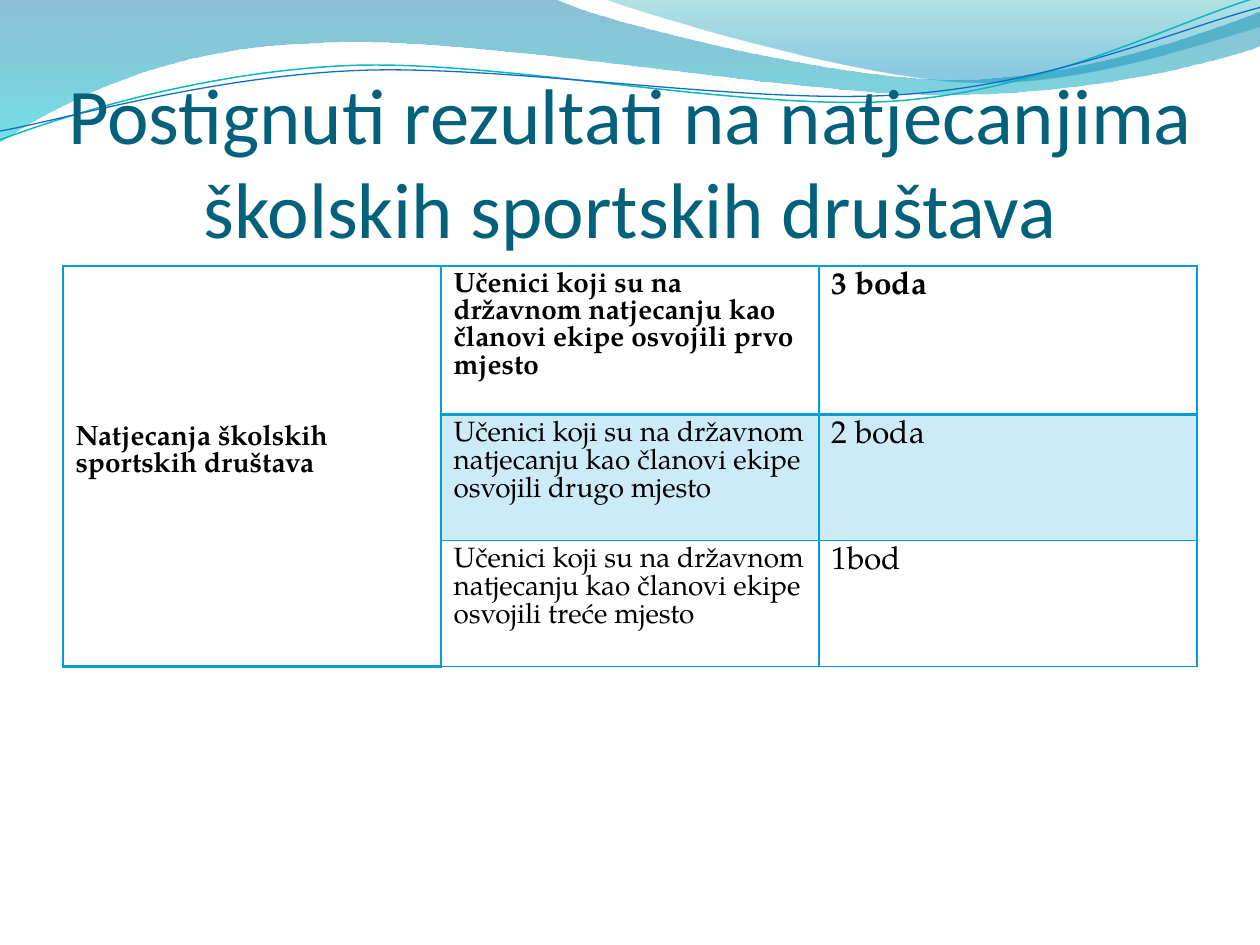
from dataclasses import dataclass
from math import cos, radians, sin

from lxml.etree import SubElement
from pptx import Presentation
from pptx.dml.color import RGBColor
from pptx.enum.text import MSO_ANCHOR, PP_ALIGN
from pptx.oxml.ns import qn
from pptx.util import Inches, Pt


@dataclass(frozen=True)
class Theme:
    title_font: str = "Calibri"
    body_font: str = "TeX Gyre Pagella"
    title_size: float = 45
    body_size: float = 16
    points_size: float = 18
    title: str = "04617B"
    text: str = "000000"
    border: str = "009DD9"
    band: str = "CCEBF7"


THEME = Theme()

TITLE = "Postignuti rezultati na natjecanjima školskih sportskih društava"
CATEGORY = "Natjecanja školskih sportskih društava"
RESULT = "Učenici koji su na državnom natjecanju kao članovi ekipe osvojili {} mjesto"
PLACES = [("prvo", "3 boda"), ("drugo", "2 boda"), ("treće", "1bod")]
ROW_HEIGHTS = [1.18, 1, 1]
STRAND_TILT = -2.7

WAVES = [
    ([[(0, 0)],
      [(4.4, -0.01)],
      [(4.76, 0.17), (6.64, 0.63), (7.58, 0.63)],
      [(8.53, 0.63), (9.58, 0.26), (10, 0.09)],
      [(10.01, 0.36)],
      [(9.83, 0.44), (8.7, 0.76), (7.46, 0.75)],
      [(6.22, 0.75), (3.82, 0.28), (2.57, 0.34)],
      [(1.29, 0.36), (0.46, 0.83), (-0.01, 1.13)],
      [(0, 0)]],
     [(0, "0074A1", 45), (1, "00C6CF", 55)]),
    ([[(4.79, -0.01)],
      [(5.09, 0.11), (6.82, 0.62), (7.69, 0.65)],
      [(8.56, 0.69), (9.61, 0.32), (10, 0.21)],
      [(10, 0)],
      [(4.79, -0.01)]],
     [(0, "00A1A9", 30), (0.8, "008BBF", 45)]),
]
STRANDS = [
    ([[(0, 1.11)],
      [(0.48, 0.93), (1.58, 0.57), (2.77, 0.52)],
      [(3.95, 0.47), (5.93, 0.89), (7.13, 0.8)],
      [(8.33, 0.71), (9.38, 0.15), (9.98, -0.02)]],
     (4.99, 0.58), "0AB8BF", 0.85),
    ([[(0, 1.04)],
      [(0.47, 0.96), (1.64, 0.61), (2.83, 0.56)],
      [(4.03, 0.51), (5.97, 0.84), (7.17, 0.75)],
      [(8.36, 0.67), (9.41, 0.21), (10, 0.06)]],
     (5, 0.59), "0F6FC6", 0.75),
]


def rgb(value):
    return RGBColor.from_string(value)


def set_attrs(obj, values):
    for name, value in values.items():
        setattr(obj, name, value)


def rotate(point, center, degrees):
    angle = radians(degrees)
    dx, dy = point[0] - center[0], point[1] - center[1]
    return (center[0] + dx * cos(angle) - dy * sin(angle),
            center[1] + dx * sin(angle) + dy * cos(angle))


def add_curve(slide, segments, close):
    points = [(Inches(x), Inches(y)) for segment in segments for x, y in segment]
    builder = slide.shapes.build_freeform(*points[0])
    builder.add_line_segments(points[1:], close=close)
    sp = builder.convert_to_shape()
    sp.shadow.inherit = False
    lines = iter(list(sp.element.spPr.iter(qn("a:lnTo"))))
    for segment in segments[1:]:
        first, *rest = [next(lines) for _ in segment]
        if rest:
            first.tag = qn("a:cubicBezTo")
            for line in rest:
                first.append(line[0])
                line.getparent().remove(line)
    return sp


def add_wave(slide, segments, stops):
    sp = add_curve(slide, segments, True)
    sp.line.fill.background()
    sp.fill.gradient()
    sp.fill.gradient_angle = 270
    for stop, (position, color, _) in zip(sp.fill.gradient_stops, stops):
        stop.position = position
        stop.color.rgb = rgb(color)
    colors = sp.element.spPr.iter(qn("a:srgbClr"))
    for color, (_, _, alpha) in zip(colors, stops):
        SubElement(color, qn("a:alpha"), val=str(alpha * 1000))


def add_strand(slide, segments, center, color, width):
    level = [[rotate(point, center, -STRAND_TILT) for point in segment]
             for segment in segments]
    sp = add_curve(slide, level, False)
    sp.rotation = STRAND_TILT
    sp.fill.background()
    sp.line.color.rgb = rgb(color)
    sp.line.width = Pt(width)


def write(tf, text, font, size, color, bold=False, align=PP_ALIGN.LEFT):
    p = tf.paragraphs[0]
    p.alignment = align
    r = p.add_run()
    r.text = text
    set_attrs(r.font, {"name": font, "size": Pt(size), "bold": bold})
    r.font.color.rgb = rgb(color)


def add_title(slide):
    box = slide.shapes.add_textbox(Inches(0.5), Inches(0.77), Inches(9), Inches(1.25))
    tf = box.text_frame
    set_attrs(tf, {"word_wrap": True, "vertical_anchor": MSO_ANCHOR.BOTTOM,
                   "margin_left": 0, "margin_right": 0,
                   "margin_top": Inches(0.05), "margin_bottom": 0})
    write(tf, TITLE, THEME.title_font, THEME.title_size, THEME.title,
          align=PP_ALIGN.CENTER)


def set_borders(cell, widths):
    tcPr = cell._tc.get_or_add_tcPr()
    for side, width in widths.items():
        ln = SubElement(tcPr, qn(f"a:ln{side}"), w=str(Pt(width)))
        fill = SubElement(ln, qn("a:solidFill"))
        SubElement(fill, qn("a:srgbClr"), val=THEME.border)


def style_cell(cell, row, col):
    heavy_bottom = row == 0 or (row == 2 and col == 0)
    set_borders(cell, {"L": 1, "R": 1, "T": 2 if row == 1 and col else 1,
                       "B": 2 if heavy_bottom else 1})
    if row == 1 and col:
        cell.fill.solid()
        cell.fill.fore_color.rgb = rgb(THEME.band)
    else:
        cell.fill.background()


def add_results(slide):
    frame = slide.shapes.add_table(3, 3, Inches(0.5), Inches(2.11), Inches(9),
                                   Inches(sum(ROW_HEIGHTS)))
    table = frame.table
    set_attrs(table, {"first_row": False, "horz_banding": False})
    for row, height in zip(table.rows, ROW_HEIGHTS):
        row.height = Inches(height)
    for row in range(3):
        for col in range(3):
            style_cell(table.cell(row, col), row, col)

    category = table.cell(0, 0)
    category.merge(table.cell(2, 0))
    set_attrs(category, {"vertical_anchor": MSO_ANCHOR.MIDDLE,
                         "margin_bottom": Inches(0.27)})
    write(category.text_frame, CATEGORY, THEME.body_font, THEME.body_size,
          THEME.text, True)
    for row, (place, points) in enumerate(PLACES):
        write(table.cell(row, 1).text_frame, RESULT.format(place), THEME.body_font,
              THEME.body_size, THEME.text, row == 0)
        write(table.cell(row, 2).text_frame, points, THEME.body_font,
              THEME.points_size, THEME.text, row == 0)


def main():
    prs = Presentation()
    set_attrs(prs, {"slide_width": Inches(10), "slide_height": Inches(7.5)})
    slide = prs.slides.add_slide(prs.slide_layouts[6])
    for wave in WAVES:
        add_wave(slide, *wave)
    for strand in STRANDS:
        add_strand(slide, *strand)
    add_title(slide)
    add_results(slide)
    prs.save("out.pptx")


if __name__ == "__main__":
    main()
